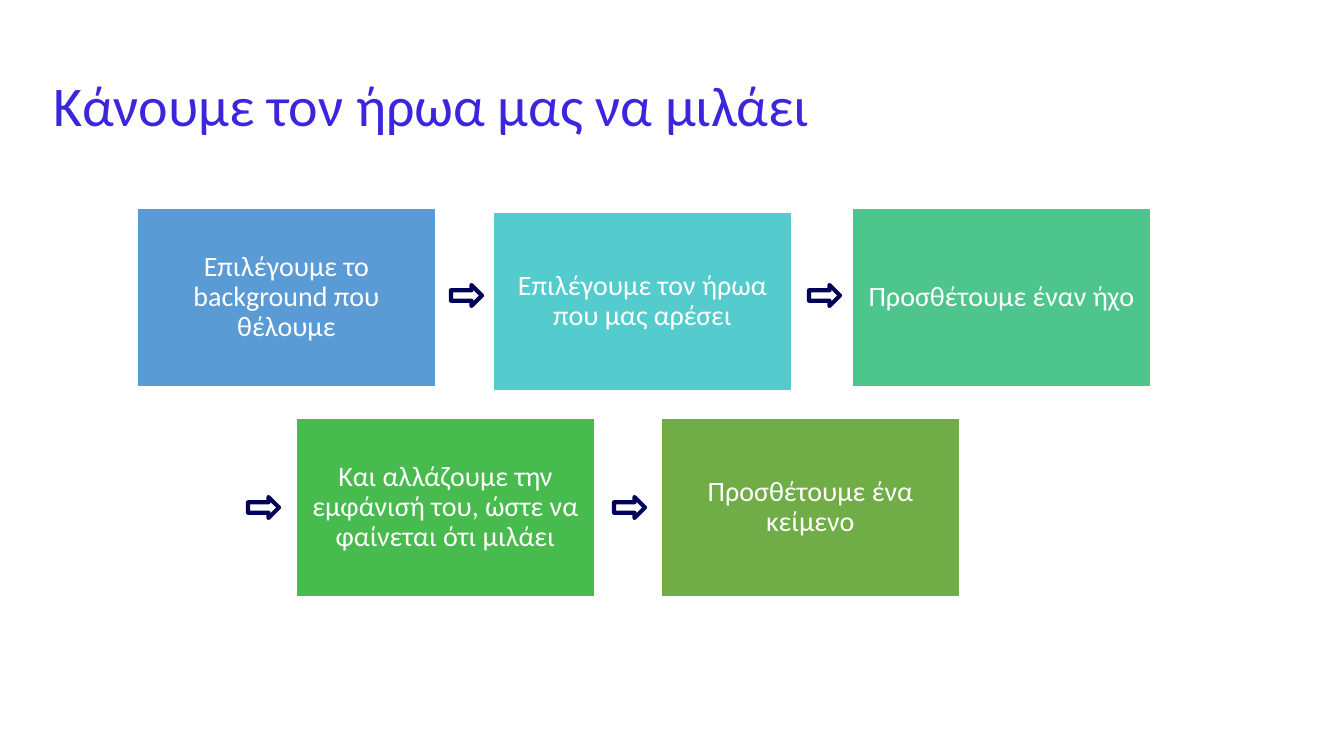
"""Builds a slide with five steps that make a hero speak."""
from pptx import Presentation
from pptx.dml.color import RGBColor
from pptx.enum.shapes import MSO_SHAPE as Preset
from pptx.enum.text import MSO_ANCHOR as Anchor, PP_ALIGN as Align
from pptx.util import Pt

SLIDE_W, SLIDE_H = 1344, 756
SCALE = 12192000 / SLIDE_W

WHITE = RGBColor(0xFF, 0xFF, 0xFF)
VIOLET = RGBColor(0x3B, 0x26, 0xDE)
NAVY = RGBColor(0x00, 0x04, 0x59)
BLUE = RGBColor(0x5B, 0x9B, 0xD5)
TURQUOISE = RGBColor(0x54, 0xCC, 0xCD)
MINT = RGBColor(0x4D, 0xC5, 0x8D)
GREEN = RGBColor(0x48, 0xBB, 0x4F)
OLIVE = RGBColor(0x70, 0xAD, 0x47)

TITLE = "Κάνουμε τον ήρωα μας να μιλάει"
STEPS = [
    ("Επιλέγουμε το background που θέλουμε", BLUE, 137, 208),
    ("Επιλέγουμε τον ήρωα που μας αρέσει", TURQUOISE, 493, 212),
    ("Προσθέτουμε έναν ήχο", MINT, 852, 208),
    ("Και αλλάζουμε την εμφάνισή του, ώστε να φαίνεται ότι μιλάει", GREEN, 296, 418),
    ("Προσθέτουμε ένα κείμενο", OLIVE, 661, 418),
]
STEP_W, STEP_H = 299, 179
ARROWS = [(451, 285), (809, 285), (248, 497), (614, 497)]
ARROW_W, ARROW_H = 31, 21


def px(length):
    return round(length * SCALE)


def write(shape, text, size, color, align=Align.LEFT, inset=10):
    frame = shape.text_frame
    frame.word_wrap = True
    frame.vertical_anchor = Anchor.MIDDLE
    frame.margin_left = frame.margin_right = px(inset)
    frame.margin_top = frame.margin_bottom = px(inset)
    paragraph = frame.paragraphs[0]
    paragraph.alignment = align
    paragraph.line_spacing = 0.9
    run = paragraph.add_run()
    run.text = text
    run.font.name = "Calibri"
    run.font.size = Pt(size)
    run.font.color.rgb = color


def add_preset(shapes, preset, left, top, width, height, line, weight, fill=None):
    shape = shapes.add_shape(preset, px(left), px(top), px(width), px(height))
    shape.shadow.inherit = False
    if fill is None:
        shape.fill.background()
    else:
        shape.fill.solid()
        shape.fill.fore_color.rgb = fill
    shape.line.color.rgb = line
    shape.line.width = Pt(weight)
    return shape


def main():
    deck = Presentation()
    deck.slide_width, deck.slide_height = px(SLIDE_W), px(SLIDE_H)
    shapes = deck.slides.add_slide(deck.slide_layouts[6]).shapes

    title = shapes.add_textbox(px(43), px(35), px(994), px(146))
    write(title, TITLE, 40, VIOLET)

    for text, fill, left, top in STEPS:
        step = add_preset(shapes, Preset.RECTANGLE, left, top, STEP_W, STEP_H, WHITE, 1, fill)
        write(step, text, 20, WHITE, align=Align.CENTER, inset=8)

    for left, top in ARROWS:
        add_preset(shapes, Preset.RIGHT_ARROW, left, top, ARROW_W, ARROW_H, NAVY, 3)

    deck.save("out.pptx")


if __name__ == "__main__":
    main()
